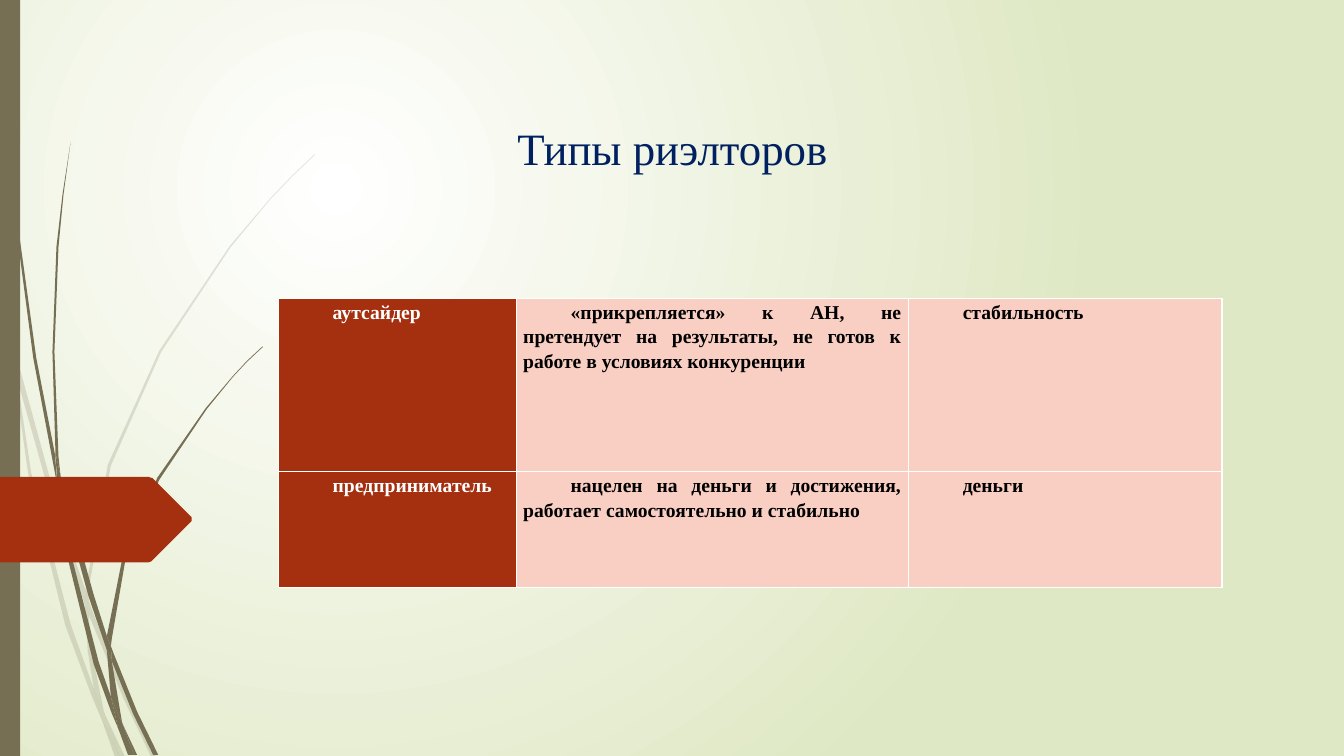
import pptx
import pptx.dml.color
import pptx.enum.shapes
import pptx.enum.text
import pptx.oxml
import pptx.oxml.ns
import pptx.util

PX = 9144  # a hundredth of an inch
FONT = "Times New Roman"
COLORS = {
    "olive": "766F54", "red": "A53010", "pink": "F9CFC3", "navy": "002060",
    "white": "FFFFFF", "black": "000000", "lime": "DFE8C4",
}
NSMAP = pptx.oxml.ns.nsdecls("a")

# Corner points of the pieces of each tuft of grass
PALE_GRASS = [
    [(11, 350), (9, 322), (0, 282), (0, 299), (10, 344)],
    [(58, 522), (84, 599), (85, 586), (62, 520), (14, 345), (17, 376)],
    [(92, 607), (88, 596), (88, 610), (123, 694), (150, 751), (155, 751), (127, 692)],
    [(119, 751), (124, 751), (105, 711)],
    [(93, 683), (70, 619), (31, 469), (17, 376), (11, 350), (28, 470), (65, 621), (92, 693),
     (101, 714), (99, 707)],
    [(84, 599), (87, 646), (93, 683), (96, 692), (105, 711), (103, 706), (91, 646), (88, 610),
     (88, 608)],
    [(88, 584), (110, 462), (160, 349), (229, 245), (268, 198), (290, 175), (312, 154),
     (312, 153), (289, 175), (268, 197), (228, 244), (158, 348), (107, 461), (85, 584),
     (85, 586), (88, 596)],
    [(101, 714), (114, 751), (119, 751)],
    [(88, 608), (88, 610), (88, 596), (85, 586), (84, 599)],
    [(96, 692), (93, 683), (99, 707), (101, 714), (119, 751), (105, 711)],
]
DARK_GRASS = [
    [(7, 110), (17, 233), (33, 355), (56, 477), (57, 481), (55, 457), (55, 453), (36, 355),
     (19, 232), (8, 109), (5, 48), (4, 0), (3, 0), (4, 48)],
    [(88, 592), (106, 645), (106, 633), (106, 631), (93, 590), (60, 472), (64, 505)],
    [(113, 649), (110, 641), (111, 656), (132, 708), (152, 749), (157, 749), (136, 706)],
    [(110, 691), (98, 657), (72, 556), (64, 505), (57, 477), (68, 557), (93, 659), (111, 708),
     (117, 722), (116, 717)],
    [(60, 472), (58, 453), (54, 349), (58, 245), (63, 193), (70, 141), (62, 193), (56, 245),
     (52, 349), (55, 449)],
    [(133, 749), (136, 749), (122, 719)],
    [(57, 477), (64, 505), (60, 472), (55, 449), (55, 453)],
    [(111, 633), (125, 552), (158, 476), (205, 406), (231, 374), (245, 359), (261, 344),
     (260, 344), (245, 358), (231, 373), (204, 405), (156, 474), (122, 551), (106, 631),
     (110, 641)],
    [(117, 722), (127, 749), (131, 749)],
    [(106, 645), (110, 691), (116, 706), (122, 719), (121, 716), (111, 656), (109, 651)],
    [(106, 645), (109, 651), (111, 656), (110, 641), (106, 631), (106, 633)],
    [(116, 706), (110, 691), (116, 717), (117, 722), (130, 749), (133, 749), (122, 719)],
]
TAG = [(147, 85), (150, 84), (151, 83), (190, 44), (190, 40), (151, 1), (150, 1), (147, 0),
       (0, 0), (0, 85)]

COL_WIDTHS = [236, 389, 311]
ROW_HEIGHTS = [172, 115]
REALTORS = [
    ["аутсайдер",
     "«прикрепляется» к АН, не претендует на результаты, не готов к работе в условиях конкуренции",
     "стабильность"],
    ["предприниматель",
     "нацелен на деньги и достижения, работает самостоятельно и стабильно",
     "деньги"],
]


def px(n):
    return pptx.util.Emu(n * PX)


def rgb(name):
    return pptx.dml.color.RGBColor.from_string(COLORS[name])


def paint(sp, color, alpha=100):
    sp.shadow.inherit = False
    sp.fill.solid()
    sp.fill.fore_color.rgb = rgb(color)
    sp.line.fill.background()
    if alpha < 100:
        clr = sp._element.spPr.find(".//" + pptx.oxml.ns.qn("a:srgbClr"))
        clr.append(pptx.oxml.parse_xml(f'<a:alpha {NSMAP} val="{alpha * 1000}"/>'))


def add_outline(shapes, points, color, alpha=100):
    builder = shapes.build_freeform(*points[0], scale=PX)
    builder.add_line_segments(points[1:], close=True)
    paint(builder.convert_to_shape(), color, alpha)


def add_background(s):
    fill = s.background.fill
    fill.gradient()
    for stop, color in zip(fill.gradient_stops, ("white", "lime")):
        stop.color.rgb = rgb(color)
    grad = next(s._element.iter(pptx.oxml.ns.qn("a:gradFill")))
    lin = grad.find(pptx.oxml.ns.qn("a:lin"))
    grad.replace(lin, pptx.oxml.parse_xml(
        f'<a:path {NSMAP} path="circle">'
        '<a:fillToRect l="50000" t="50000" r="100000" b="100000"/></a:path>'))


def add_side_decoration(s, width, height, tag_top):
    for grass, alpha in ((PALE_GRASS, 20), (DARK_GRASS, 100)):
        tuft = s.shapes.add_group_shape()
        for piece in grass:
            add_outline(tuft.shapes, piece, "olive", alpha)
    bar = s.shapes.add_shape(pptx.enum.shapes.MSO_SHAPE.RECTANGLE, 0, 0, px(width), px(height))
    paint(bar, "olive")
    add_outline(s.shapes, [(x, tag_top + y) for x, y in TAG], "red")


def set_title(s, text, x, y, w, h):
    title = s.shapes.title
    title.left, title.top, title.width, title.height = px(x), px(y), px(w), px(h)
    tf = title.text_frame
    tf.text = text
    tf.word_wrap = True
    tf.vertical_anchor = pptx.enum.text.MSO_ANCHOR.BOTTOM
    p = tf.paragraphs[0]
    p.alignment = pptx.enum.text.PP_ALIGN.CENTER
    p.font.name, p.font.size = FONT, pptx.util.Pt(32)
    p.font.color.rgb = rgb("navy")


def format_cell(cell, text, fill, color):
    cell.fill.solid()
    cell.fill.fore_color.rgb = rgb(fill)
    cell.margin_left = cell.margin_right = px(7)
    cell.margin_top = cell.margin_bottom = 0
    cell.text = text
    p = cell.text_frame.paragraphs[0]
    p.alignment = pptx.enum.text.PP_ALIGN.JUSTIFY
    p.line_spacing, p.space_after = 1.15, pptx.util.Pt(10)
    pPr = p._p.get_or_add_pPr()
    pPr.set("marL", "0")
    pPr.set("indent", str(px(47)))
    p.font.name, p.font.size, p.font.bold = FONT, pptx.util.Pt(14), True
    p.font.color.rgb = rgb(color)


def add_realtor_table(s, x, y):
    """Add the table; its white rules come from the default table style."""
    frame = s.shapes.add_table(len(REALTORS), len(COL_WIDTHS), px(x), px(y),
                               px(sum(COL_WIDTHS)), px(sum(ROW_HEIGHTS)))
    table = frame.table
    for col, width in zip(table.columns, COL_WIDTHS):
        col.width = px(width)
    for row, texts, height in zip(table.rows, REALTORS, ROW_HEIGHTS):
        row.height = px(height)
        for c, (cell, text) in enumerate(zip(row.cells, texts)):
            format_cell(cell, text, *(("pink", "black") if c else ("red", "white")))


def main():
    prs = pptx.Presentation()
    prs.slide_width, prs.slide_height = px(1333), px(750)
    s = prs.slides.add_slide(prs.slide_layouts.get_by_name("Title Only"))
    add_background(s)
    add_side_decoration(s, 20, 750, tag_top=473)
    set_title(s, "Типы риэлторов", 167, 57, 1000, 121)
    add_realtor_table(s, 276, 296)
    prs.save("out.pptx")


if __name__ == "__main__":
    main()
